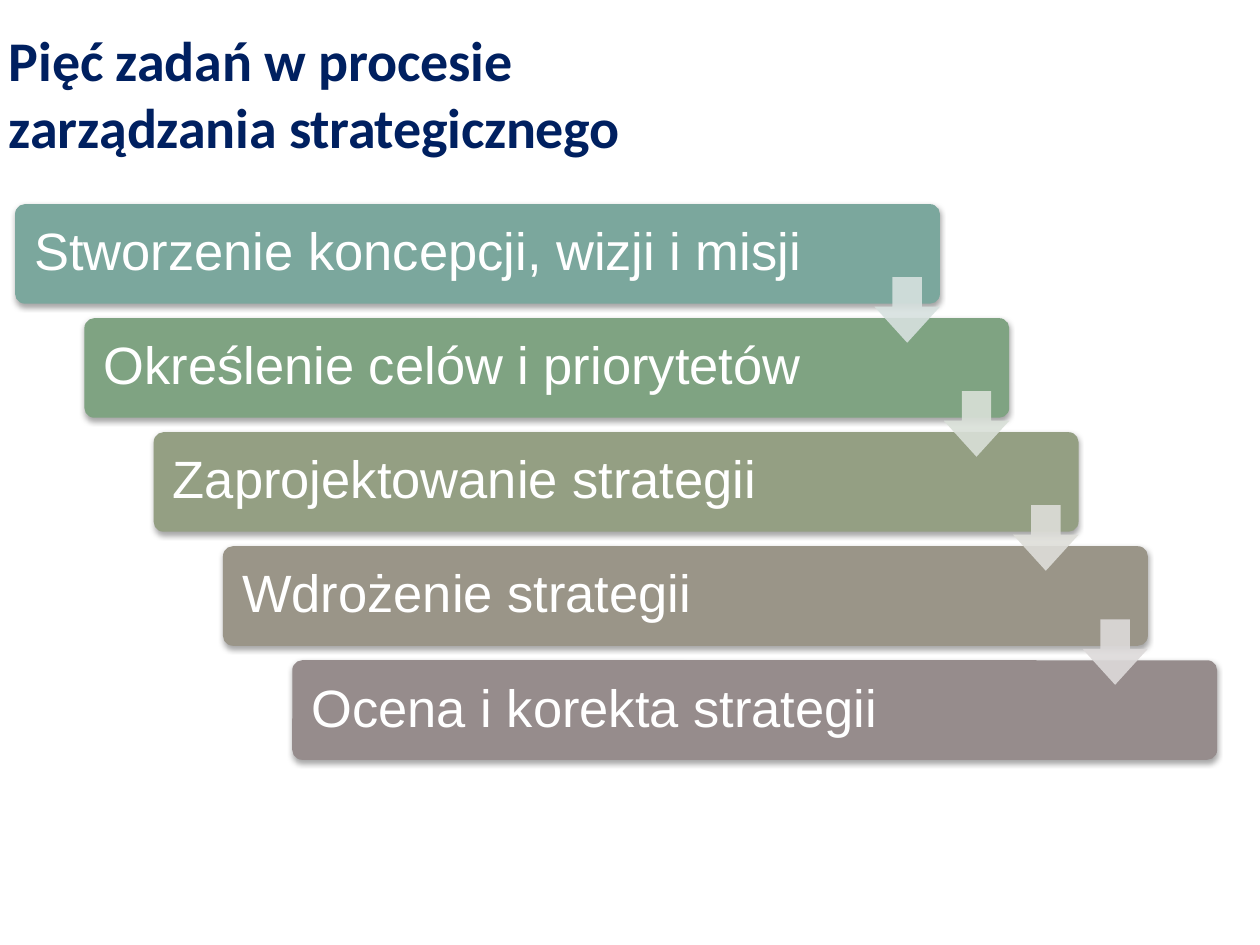
from lxml.etree import SubElement
from pptx import Presentation
from pptx.dml.color import RGBColor
from pptx.enum.shapes import MSO_SHAPE
from pptx.enum.text import MSO_ANCHOR
from pptx.oxml.ns import qn
from pptx.util import Inches, Pt

TITLE = [  # lines of (text, letter spacing in hundredths of a point)
    [("Pięć zadań w procesie", -10)],
    [("zarządzania ", -10), ("strategicznego", -20)],
]
TASKS = [  # text, bar colour, colour of the arrow to the next task
    ("Stworzenie koncepcji, wizji i misji", "7BA79D", "D7E1DF"),
    ("Określenie celów i priorytetów", "7FA382", "D9E0D8"),
    ("Zaprojektowanie strategii", "949F83", "DEDED9"),
    ("Wdrożenie strategii", "9A9588", "DDDADA"),
    ("Ocena i korekta strategii", "968C8C", None),
]
LEFT, TOP = 0.12, 1.62
BAR_W, BAR_H = 7.34, 0.79
STEP_X, STEP_Y = 0.55, 0.905
ARROW = 0.52
ARROW_DROP = 0.58  # from the top of a bar to the top of its arrow


def rgb(value):
    return RGBColor.from_string(value)


def add_block(s, kind, x, y, w, h, color, adjustments):
    sp = s.shapes.add_shape(kind, Inches(x), Inches(y), Inches(w), Inches(h))
    for i, value in enumerate(adjustments):
        sp.adjustments[i] = value
    sp.shadow.inherit = False
    sp.fill.solid()
    sp.fill.fore_color.rgb = rgb(color)
    sp.line.fill.background()
    return sp


def set_alpha(color_element, percent):
    SubElement(color_element, qn("a:alpha"), val=str(percent * 1000))


def add_shadow(sp):
    effects = sp.element.spPr.find(qn("a:effectLst"))
    shadow = SubElement(effects, qn("a:outerShdw"), blurRad=str(Pt(3.1)),
                        dist=str(Pt(1.8)), dir="5400000", rotWithShape="0")
    set_alpha(SubElement(shadow, qn("a:srgbClr"), val="000000"), 35)


def add_title(s):
    box = s.shapes.add_textbox(0, Inches(0.13), Inches(8.15), Inches(1.2))
    tf = box.text_frame
    tf.word_wrap = True
    tf.margin_left = tf.margin_top = Inches(0.07)
    p = tf.paragraphs[0]
    for i, line in enumerate(TITLE):
        if i:
            p.add_line_break()
        for text, spacing in line:
            r = p.add_run()
            r.text = text
            r.font.size = Pt(32)
            r.font.name = "Calibri"
            r.font.bold = True
            r.font.color.rgb = rgb("002060")
            r.font._element.set("spc", str(spacing))


def add_bar(s, x, y, text, color):
    sp = add_block(s, MSO_SHAPE.ROUNDED_RECTANGLE, x, y, BAR_W, BAR_H, color, [0.1])
    add_shadow(sp)
    tf = sp.text_frame
    tf.word_wrap = True
    tf.vertical_anchor = MSO_ANCHOR.MIDDLE
    tf.margin_left = tf.margin_right = Inches(0.13)
    p = tf.paragraphs[0]
    p.text = text
    p.alignment = 1
    p.line_spacing = 0.9
    p.font.size = Pt(30)
    p.font.name = "Arial"
    p.font.color.rgb = rgb("FFFFFF")


def add_arrow(s, x, y, color):
    sp = add_block(s, MSO_SHAPE.DOWN_ARROW, x, y, ARROW, ARROW, color, [0.45, 0.55])
    set_alpha(sp.element.spPr.find(qn("a:solidFill"))[0], 90)


prs = Presentation()
prs.slide_width, prs.slide_height = Inches(10), Inches(7.5)
s = prs.slides.add_slide(prs.slide_layouts[6])
add_title(s)

places = [(LEFT + i * STEP_X, TOP + i * STEP_Y) for i in range(len(TASKS))]
for (x, y), (text, color, _) in zip(places, TASKS):
    add_bar(s, x, y, text, color)
for (x, y), (_, _, color) in zip(places, TASKS):
    if color:
        add_arrow(s, x + BAR_W - ARROW, y + ARROW_DROP, color)

prs.save("out.pptx")
